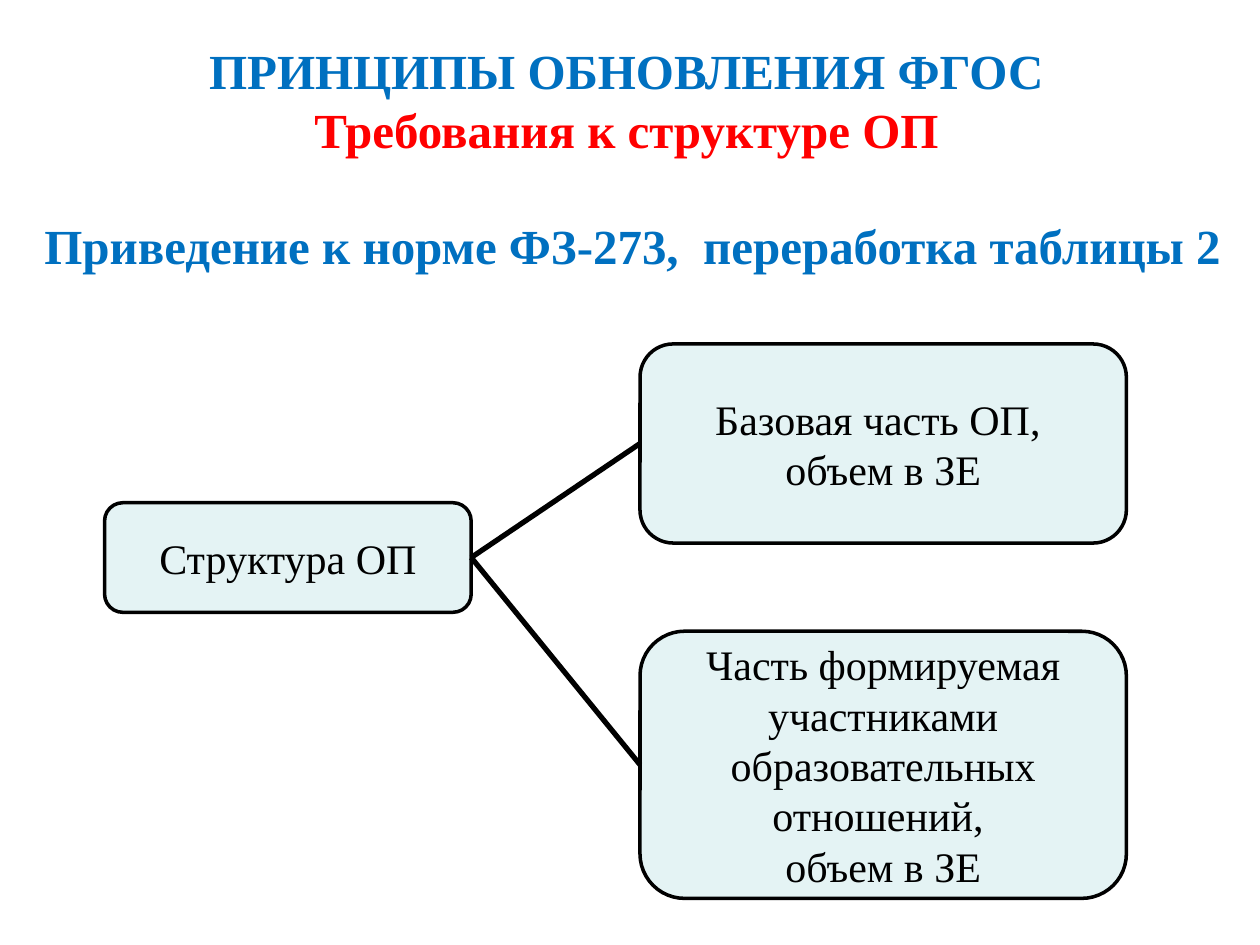
from lxml import etree
from pptx import Presentation
from pptx.dml.color import RGBColor
from pptx.enum.shapes import MSO_CONNECTOR, MSO_SHAPE
from pptx.enum.text import MSO_ANCHOR, MSO_AUTO_SIZE, PP_ALIGN
from pptx.oxml.ns import qn
from pptx.util import Inches, Pt

ROUNDED = MSO_SHAPE.ROUNDED_RECTANGLE
STRAIGHT = MSO_CONNECTOR.STRAIGHT
MIDDLE = MSO_ANCHOR.MIDDLE
CENTER = PP_ALIGN.CENTER
NO_AUTOFIT = MSO_AUTO_SIZE.NONE

BLUE = RGBColor(0x00, 0x70, 0xC0)
RED = RGBColor(0xFF, 0x00, 0x00)
BLACK = RGBColor(0x00, 0x00, 0x00)
PALE_TEAL = RGBColor(0xE4, 0xF3, 0xF4)

FONT = "Times New Roman"
LEFT_SIDE, RIGHT_SIDE = 1, 3


def write_lines(text_frame, lines, font_format):
    """Write (text, colour, space before) tuples as centred paragraphs."""
    text_frame.word_wrap = True
    text_frame.vertical_anchor = MIDDLE
    for index, (text, color, space_before) in enumerate(lines):
        paragraph = text_frame.paragraphs[0] if index == 0 else text_frame.add_paragraph()
        paragraph.alignment = CENTER
        paragraph.space_before = Pt(space_before)
        run = paragraph.add_run()
        run.text = text
        run.font.color.rgb = color
        for name, value in font_format.items():
            setattr(run.font, name, value)


presentation = Presentation()
presentation.slide_width = Inches(10)
presentation.slide_height = Inches(7.5)
slide = presentation.slides.add_slide(presentation.slide_layouts[5])

# Title
title = slide.shapes.title
title.left, title.top = Inches(0.12), Inches(0.24)
title.width, title.height = Inches(9.8), Inches(2.02)
title.text_frame.auto_size = NO_AUTOFIT
title_lines = [
    ("ПРИНЦИПЫ ОБНОВЛЕНИЯ ФГОС ", BLUE, 0),
    ("Требования к структуре ОП ", RED, 0),
    ("Приведение к норме ФЗ-273,  переработка таблицы 2", BLUE, 33),
]
write_lines(title.text_frame, title_lines, {"name": FONT, "size": Pt(28), "bold": True})

# Boxes: the programme structure, then its two parts
box_rows = [
    (0.83, 3.99, 2.91, 0.87, ["Структура ОП"]),
    (5.08, 2.73, 3.86, 1.58, ["Базовая часть ОП, ", "объем в ЗЕ"]),
    (5.08, 5.01, 3.86, 2.12,
     ["Часть формируемая участниками образовательных отношений, ", "объем в ЗЕ"]),
]
boxes = []
for left, top, width, height, texts in box_rows:
    box = slide.shapes.add_shape(
        ROUNDED, Inches(left), Inches(top), Inches(width), Inches(height))
    box.shadow.inherit = False
    box.fill.solid()
    box.fill.fore_color.rgb = PALE_TEAL
    box.line.color.rgb = BLACK
    box.line.width = Pt(2)
    write_lines(box.text_frame, [(text, BLACK, 0) for text in texts],
                {"name": FONT, "size": Pt(24)})
    boxes.append(box)

# Branches from the structure to each part
structure, *parts = boxes
for part in parts:
    branch = slide.shapes.add_connector(STRAIGHT, 0, 0, 0, 0)
    branch.begin_connect(structure, RIGHT_SIDE)
    branch.end_connect(part, LEFT_SIDE)
    branch.line.color.rgb = BLACK
    branch.line.width = Pt(3)
    etree.SubElement(branch._element.spPr, qn("a:effectLst"))

presentation.save("out.pptx")
